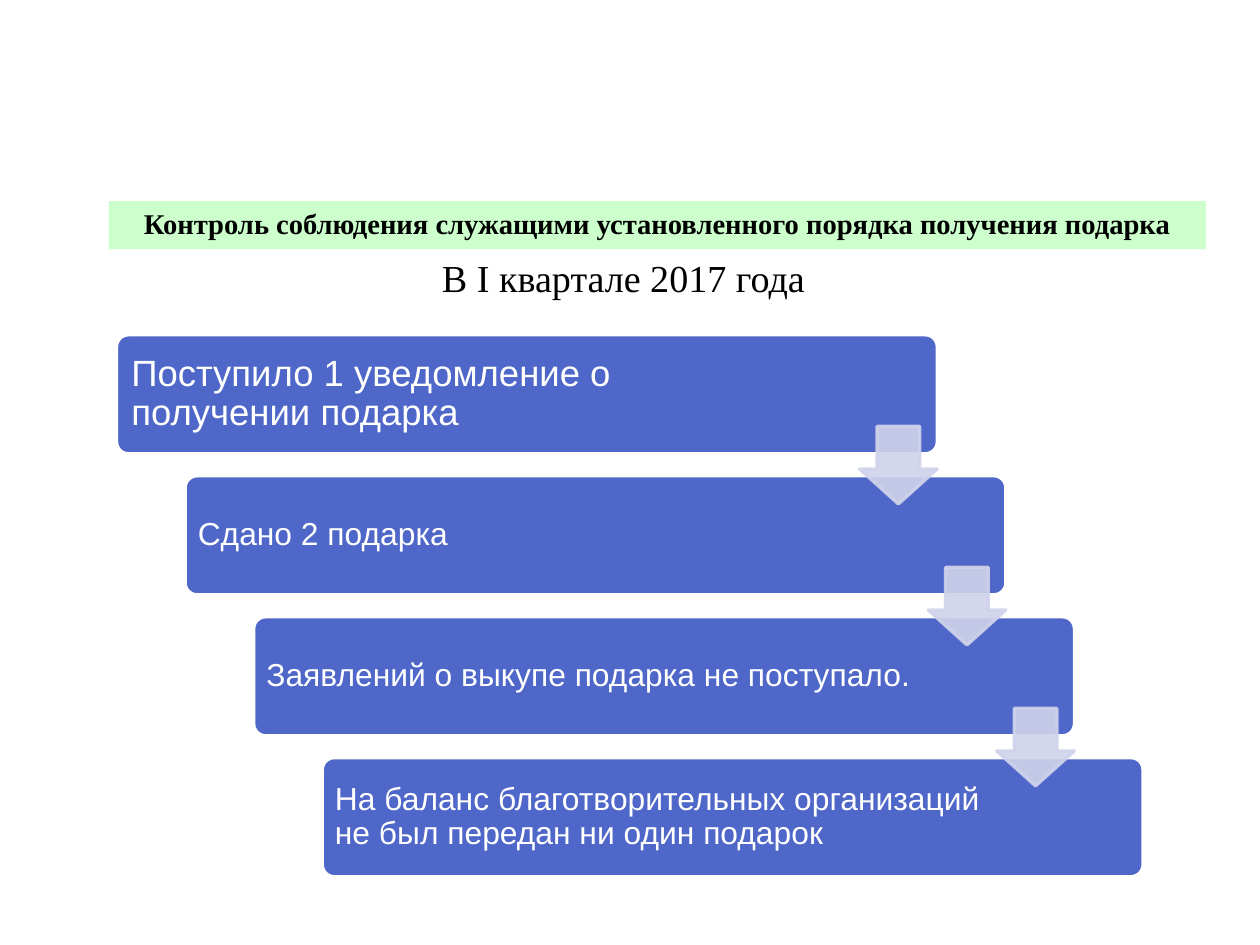
from lxml import etree
from pptx import Presentation, util as u
from pptx.dml.color import RGBColor
from pptx.enum import shapes, text
from pptx.oxml.ns import qn

CM_PER_INCH = 2.54
STEPS = [
    ("Поступило 1 уведомление о получении подарка", 23, 0.1),
    ("Сдано 2 подарка", 20, 0.08),
    ("Заявлений о выкупе подарка не поступало.", 20, 0.08),
    ("На баланс благотворительных организаций не был передан ни один подарок", 20, 0.08),
]
STEP_WIDTH, STEP_HEIGHT = 7.18, 1.04
TEXT_WIDTH = 5.9
ARROW_SIZE, ARROW_DROP = 0.68, 0.8


def color(value):
    return RGBColor.from_string(value)


def add_box(slide, kind, box, fill, line=None, adjustments=()):
    shape = slide.shapes.add_shape(kind, *map(u.Inches, box))
    shape.shadow.inherit = False
    shape.fill.solid()
    shape.fill.fore_color.rgb = color(fill)
    if line:
        shape.line.color.rgb = color(line)
        shape.line.width = u.Pt(2)
    else:
        shape.line.fill.background()
    for index, value in enumerate(adjustments):
        shape.adjustments[index] = value
    return shape


def write(shape, words, font, size, ink, align, spacing=0.9, bold=False,
          margins=(0, 0, 0, 0)):
    frame = shape.text_frame
    frame.word_wrap = True
    frame.vertical_anchor = text.MSO_ANCHOR.MIDDLE
    (frame.margin_left, frame.margin_top,
     frame.margin_right, frame.margin_bottom) = map(u.Inches, margins)
    paragraph = frame.paragraphs[0]
    paragraph.text = words
    paragraph.alignment = align
    paragraph.line_spacing = spacing
    paragraph.font.name = font
    paragraph.font.size = u.Pt(size)
    paragraph.font.bold = bold
    paragraph.font.color.rgb = color(ink)


def add_heading(slide, left, top, width):
    center = text.PP_ALIGN.CENTER
    title = add_box(slide, shapes.MSO_SHAPE.RECTANGLE, (left, top, width, 0.42), "CCFFCC")
    write(title, "Контроль соблюдения служащими установленного порядка получения подарка",
          "Times New Roman", 18, "000000", center, bold=True)
    period = slide.shapes.add_textbox(
        *map(u.Inches, (left + 2.18, top + 0.47, 4.65, 0.45)))
    write(period, "В I квартале 2017 года", "Times New Roman", 24, "000000", center,
          spacing=0.87, margins=(0.1, 0.05, 0.1, 0.05))


def add_arrow(slide, left, top):
    arrow = add_box(slide, shapes.MSO_SHAPE.DOWN_ARROW,
                    (left, top, ARROW_SIZE, ARROW_SIZE), "D0D3EB", "D0D3EB", (0.55, 0.45))
    for tint in arrow.element.spPr.iter(qn("a:srgbClr")):
        etree.SubElement(tint, qn("a:alpha")).set("val", "90000")


def add_staircase(slide, left, top, width, height):
    gaps = len(STEPS) - 1
    shift = (width - STEP_WIDTH) / gaps
    drop = (height - STEP_HEIGHT) / gaps
    corners = [(left + i * shift, top + i * drop) for i in range(len(STEPS))]
    for (x, y), (words, size, inset) in zip(corners, STEPS):
        step = add_box(slide, shapes.MSO_SHAPE.ROUNDED_RECTANGLE,
                       (x, y, STEP_WIDTH, STEP_HEIGHT), "4E67C8", "FFFFFF", (0.1,))
        write(step, words, "Arial", size, "FFFFFF", text.PP_ALIGN.LEFT,
              margins=(inset, inset, STEP_WIDTH - TEXT_WIDTH, inset))
    for x, y in corners[:-1]:
        add_arrow(slide, x + STEP_WIDTH - ARROW_SIZE, y + ARROW_DROP)


def main():
    presentation = Presentation()
    presentation.slide_width = u.Inches(28 / CM_PER_INCH)
    presentation.slide_height = u.Inches(21 / CM_PER_INCH)
    slide = presentation.slides.add_slide(presentation.slide_layouts[6])
    add_heading(slide, 0.95, 1.76, 9.6)
    add_staircase(slide, 1.02, 2.93, 8.98, 4.74)
    presentation.save("out.pptx")


if __name__ == "__main__":
    main()
